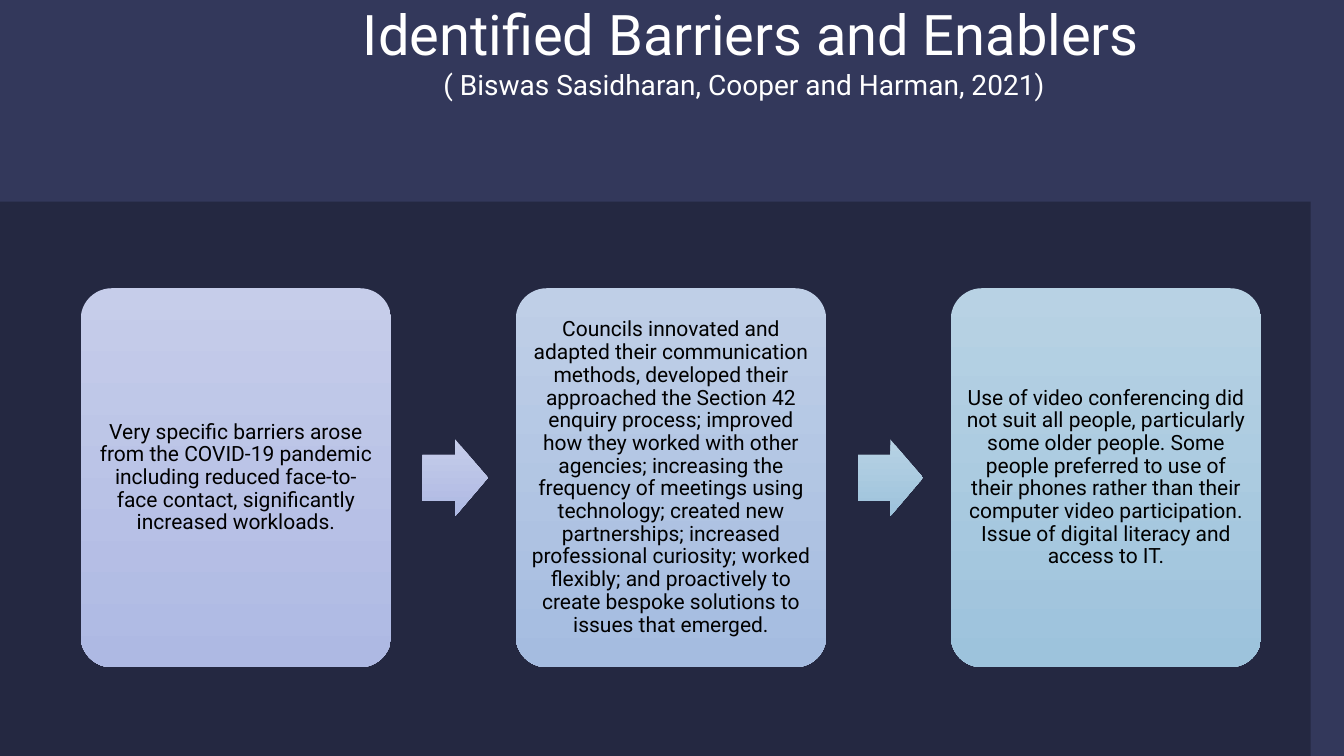
from pptx import Presentation
from pptx.dml.color import RGBColor
from pptx.enum.shapes import MSO_SHAPE as Shape
from pptx.enum.text import MSO_ANCHOR as Anchor, PP_ALIGN as Align
from pptx.util import Inches, Pt

HEADING = " Identified Barriers and Enablers"
CITATION = "( Biswas Sasidharan, Cooper and Harman, 2021)"
FINDINGS = [
    "Very specific barriers arose from the COVID-19 pandemic including reduced "
    "face-to-face contact, significantly increased workloads.",
    "Councils innovated and adapted their communication methods, developed their "
    "approached the Section 42 enquiry process; improved how they worked with other "
    "agencies; increasing the frequency of meetings using technology; created new "
    "partnerships; increased professional curiosity; worked flexibly; and proactively "
    "to create bespoke solutions to issues that emerged.",
    "Use of video conferencing did not suit all people, particularly some older people. "
    "Some people preferred to use of their phones rather than their computer video "
    "participation. Issue of digital literacy and access to IT.",
]

THEME = {
    "font": "Roboto",
    "band": "33385B",
    "ground": "242841",
    "light": "FFFFFF",
    "dark": "000000",
    "cards": [("C6CDEA", "AEB9E3"), ("BFCFE7", "A5BCE0"), ("B8D2E4", "9DC3DC")],
    "arrows": [("C6CDEA", "AEB9E3"), ("B8D2E4", "9DC3DC")],
    "heading_size": 40,
    "citation_size": 20,
    "finding_size": 15,
}

SLIDE_W, SLIDE_H = 13.33, 7.5
CARD_LEFT, CARD_TOP, CARD_W, CARD_H = 0.8, 2.86, 3.08, 3.76
CARD_PITCH = 4.315
ARROW_W, ARROW_H = 0.65, 0.76
ARROW_OFFSET = 3.39
ARROW_TOP = CARD_TOP + (CARD_H - ARROW_H) / 2
RIDGE = [(0.01, 2.02), (0.08, 2.02), (1.4, 2.07), (2.72, 2.05), (4.36, 2.01),
         (10.12, 1.9), (11.77, 1.98), (12.43, 1.97), (13.23, 1.95), (SLIDE_W, 1.95)]


def add_run(paragraph, text, size, color):
    run = paragraph.add_run()
    run.text = text
    run.font.name = THEME["font"]
    run.font.size = Pt(size)
    run.font.color.rgb = RGBColor.from_string(color)


def set_frame(frame, inset, anchor):
    frame.word_wrap = True
    frame.vertical_anchor = anchor
    frame.margin_left = frame.margin_right = Inches(inset)
    frame.margin_top = frame.margin_bottom = Inches(inset)
    paragraph = frame.paragraphs[0]
    paragraph.alignment = Align.CENTER
    return paragraph


def paint(shape, color):
    shape.shadow.inherit = False
    shape.line.fill.background()
    shape.fill.solid()
    shape.fill.fore_color.rgb = RGBColor.from_string(color)


def paint_gradient(shape, colors):
    """Fill from the first colour at the top to the second at the bottom."""
    shape.shadow.inherit = False
    shape.line.fill.background()
    shape.fill.gradient()
    shape.fill.gradient_angle = 270
    for stop, position, color in zip(shape.fill.gradient_stops, (0, 1), colors):
        stop.position = position
        stop.color.rgb = RGBColor.from_string(color)


def add_backdrop(slide):
    slide.background.fill.solid()
    slide.background.fill.fore_color.rgb = RGBColor.from_string(THEME["ground"])
    band = slide.shapes.add_shape(Shape.RECTANGLE, 0, 0, Inches(SLIDE_W), Inches(SLIDE_H))
    paint(band, THEME["band"])
    builder = slide.shapes.build_freeform(0, SLIDE_H, scale=Inches(1))
    builder.add_line_segments(RIDGE + [(SLIDE_W, SLIDE_H)], close=True)
    paint(builder.convert_to_shape(), THEME["ground"])


def add_title(slide):
    title = slide.shapes.add_textbox(Inches(2.24), 0, Inches(10.28), Inches(1.42))
    paragraph = set_frame(title.text_frame, 0, Anchor.TOP)
    add_run(paragraph, HEADING, THEME["heading_size"], THEME["light"])
    paragraph.add_line_break()
    add_run(paragraph, CITATION, THEME["citation_size"], THEME["light"])


def add_card(slide, index, finding):
    left = CARD_LEFT + index * CARD_PITCH
    card = slide.shapes.add_shape(Shape.ROUNDED_RECTANGLE, Inches(left), Inches(CARD_TOP),
                                  Inches(CARD_W), Inches(CARD_H))
    card.adjustments[0] = 0.1
    paint_gradient(card, THEME["cards"][index])
    paragraph = set_frame(card.text_frame, 0.06, Anchor.MIDDLE)
    paragraph.line_spacing = 0.9
    add_run(paragraph, finding, THEME["finding_size"], THEME["dark"])


def add_arrow(slide, index, colors):
    left = CARD_LEFT + index * CARD_PITCH + ARROW_OFFSET
    arrow = slide.shapes.add_shape(Shape.RIGHT_ARROW, Inches(left), Inches(ARROW_TOP),
                                   Inches(ARROW_W), Inches(ARROW_H))
    arrow.adjustments[0] = 0.6
    arrow.adjustments[1] = 0.5
    paint_gradient(arrow, colors)


def main():
    deck = Presentation()
    deck.slide_width, deck.slide_height = Inches(SLIDE_W), Inches(SLIDE_H)
    slide = deck.slides.add_slide(deck.slide_layouts[6])
    add_backdrop(slide)
    add_title(slide)
    for index, finding in enumerate(FINDINGS):
        add_card(slide, index, finding)
    for index, colors in enumerate(THEME["arrows"]):
        add_arrow(slide, index, colors)
    deck.save("out.pptx")


if __name__ == "__main__":
    main()
